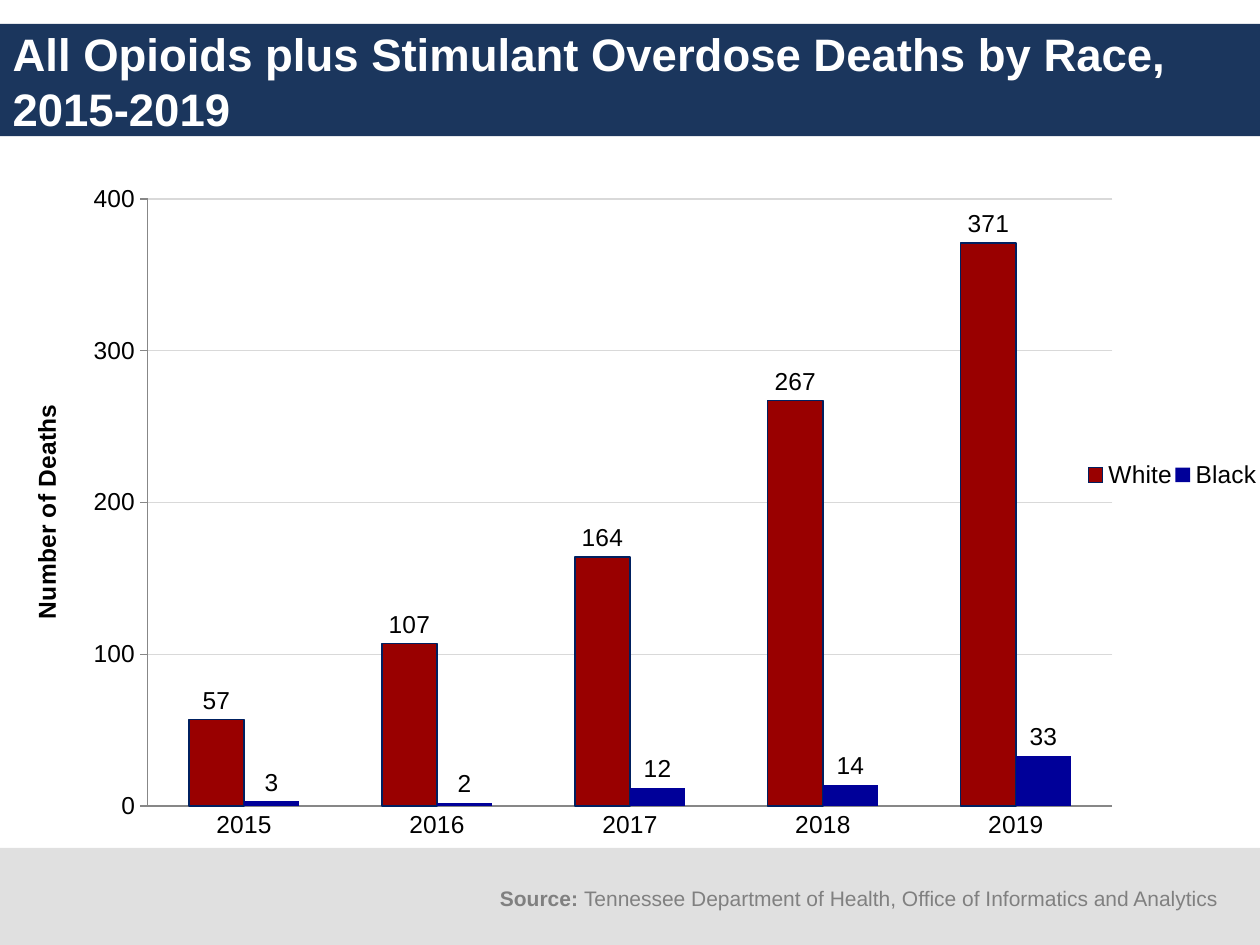
from lxml.etree import SubElement
from pptx import Presentation
from pptx.chart.data import CategoryChartData
from pptx.dml.color import RGBColor
from pptx.enum.chart import XL_CHART_TYPE, XL_LABEL_POSITION, XL_LEGEND_POSITION, XL_TICK_MARK
from pptx.enum.shapes import MSO_SHAPE
from pptx.enum.text import MSO_ANCHOR, MSO_AUTO_SIZE, PP_ALIGN
from pptx.oxml.ns import qn
from pptx.util import Inches, Pt


def rgb(value):
    return RGBColor.from_string(value)


class SlideBuilder:
    """Hold the style and the current slide, and add its elements."""

    font_name = "Arial"
    navy, footer_grey, text_grey = "1B365D", "E0E0E0", "808080"
    black, white, axis_grey, grid_grey = "000000", "FFFFFF", "878787", "D9D9D9"

    def __init__(self, prs):
        self.s = prs.slides.add_slide(prs.slide_layouts[5])

    def style(self, font, size, color, bold=False):
        font.name = self.font_name
        font.size = Pt(size)
        font.bold = bold
        font.color.rgb = rgb(color)

    def band(self, top, height, color):
        sp = self.s.shapes.add_shape(
            MSO_SHAPE.RECTANGLE, 0, Inches(top), Inches(10), Inches(height))
        sp.shadow.inherit = False
        sp.fill.solid()
        sp.fill.fore_color.rgb = rgb(color)
        sp.line.fill.background()
        self.s.shapes._spTree.insert(2, sp._element)

    def title(self, text, left, top, width, height):
        sp = self.s.shapes.title
        sp.left, sp.top = Inches(left), Inches(top)
        sp.width, sp.height = Inches(width), Inches(height)
        tf = sp.text_frame
        tf.text = text
        tf.word_wrap = True
        tf.auto_size = MSO_AUTO_SIZE.NONE
        tf.vertical_anchor = MSO_ANCHOR.MIDDLE
        p = tf.paragraphs[0]
        p.alignment = PP_ALIGN.LEFT
        self.style(p.runs[0].font, 26, self.white, True)

    def source(self, label, text, left, top, width, height):
        tf = self.s.shapes.add_textbox(
            Inches(left), Inches(top), Inches(width), Inches(height)).text_frame
        tf.word_wrap = True
        for part, bold in ((label, True), (text, False)):
            r = tf.paragraphs[0].add_run()
            r.text = part
            self.style(r.font, 12, self.text_grey, bold)

    def layout(self, element, x, y, w, h, inner=False):
        for old in element.findall(qn("c:layout")):
            element.remove(old)
        layout = SubElement(element, qn("c:layout"))
        manual = SubElement(layout, qn("c:manualLayout"))
        values = [("layoutTarget", "inner")] if inner else []
        values += [("xMode", "edge"), ("yMode", "edge"),
                   ("x", x), ("y", y), ("w", w), ("h", h)]
        for tag, value in values:
            SubElement(manual, qn(f"c:{tag}")).set("val", str(value))
        return layout

    def chart(self, categories, series, left, top, width, height):
        data = CategoryChartData(number_format="0")
        data.categories = categories
        for name, values, *_ in series:
            data.add_series(name, values)
        chart = self.s.shapes.add_chart(
            XL_CHART_TYPE.COLUMN_CLUSTERED, Inches(left), Inches(top),
            Inches(width), Inches(height), data).chart
        self.style(chart.font, 18, self.black)
        chart.has_title = False
        plot = chart.plots[0]
        plot.gap_width = 150
        plot.overlap = 0
        plot.vary_by_categories = False
        for ser, (_, _, color, outline) in zip(plot.series, series):
            self.series(ser, color, outline)
        self.axes(chart)
        self.legend(chart)
        area = chart._chartSpace.chart.plotArea
        area.insert(0, self.layout(area, 0.11, 0.046, 0.772, 0.889, inner=True))

    def series(self, ser, color, outline):
        ser.format.fill.solid()
        ser.format.fill.fore_color.rgb = rgb(color)
        if outline:
            ser.format.line.color.rgb = rgb(outline)
            ser.format.line.width = Pt(0.75)
        else:
            ser.format.line.fill.background()
        labels = ser.data_labels
        labels.show_value = True
        labels.number_format = "#,##0"
        labels.number_format_is_linked = False
        labels.position = XL_LABEL_POSITION.OUTSIDE_END
        self.style(labels.font, 14, self.black)

    def axes(self, chart):
        cat, val = chart.category_axis, chart.value_axis
        for axis, tick in ((cat, XL_TICK_MARK.NONE), (val, XL_TICK_MARK.OUTSIDE)):
            axis.major_tick_mark = tick
            axis.minor_tick_mark = XL_TICK_MARK.NONE
            axis.format.line.color.rgb = rgb(self.axis_grey)
            axis.format.line.width = Pt(0.75)
            self.style(axis.tick_labels.font, 14, self.black)
        val.minimum_scale, val.maximum_scale, val.major_unit = 0, 400, 100
        val.tick_labels.number_format = "########0"
        val.tick_labels.number_format_is_linked = False
        val.has_major_gridlines = True
        val.major_gridlines.format.line.color.rgb = rgb(self.grid_grey)
        val.major_gridlines.format.line.width = Pt(0.75)
        tf = val.axis_title.text_frame
        tf.text = "Number of Deaths"
        self.style(tf.paragraphs[0].runs[0].font, 14, self.black, True)

    def legend(self, chart):
        chart.has_legend = True
        legend = chart.legend
        legend.position = XL_LEGEND_POSITION.RIGHT
        legend.include_in_layout = False
        self.style(legend.font, 14, self.black)
        element = legend._element
        layout = self.layout(element, 0.86, 0.42, 0.14, 0.06)
        element.find(qn("c:legendPos")).addnext(layout)


def main():
    prs = Presentation()
    prs.slide_width, prs.slide_height = Inches(10), Inches(7.5)
    slide = SlideBuilder(prs)
    slide.band(6.73, 0.77, slide.footer_grey)
    slide.band(0.19, 0.89, slide.navy)
    slide.title("All Opioids plus Stimulant Overdose Deaths by Race, 2015-2019",
                0, 0.19, 10, 0.9)
    slide.chart(
        ["2015", "2016", "2017", "2018", "2019"],
        [("White", (57, 107, 164, 267, 371), "990000", "002060"),
         ("Black", (3, 2, 12, 14, 33), "000099", None)],
        0.08, 1.33, 9.92, 5.42)
    slide.source("Source: ",
                 "Tennessee Department of Health, Office of Informatics and Analytics",
                 3.87, 6.98, 6, 0.3)
    prs.save("out.pptx")


if __name__ == "__main__":
    main()
